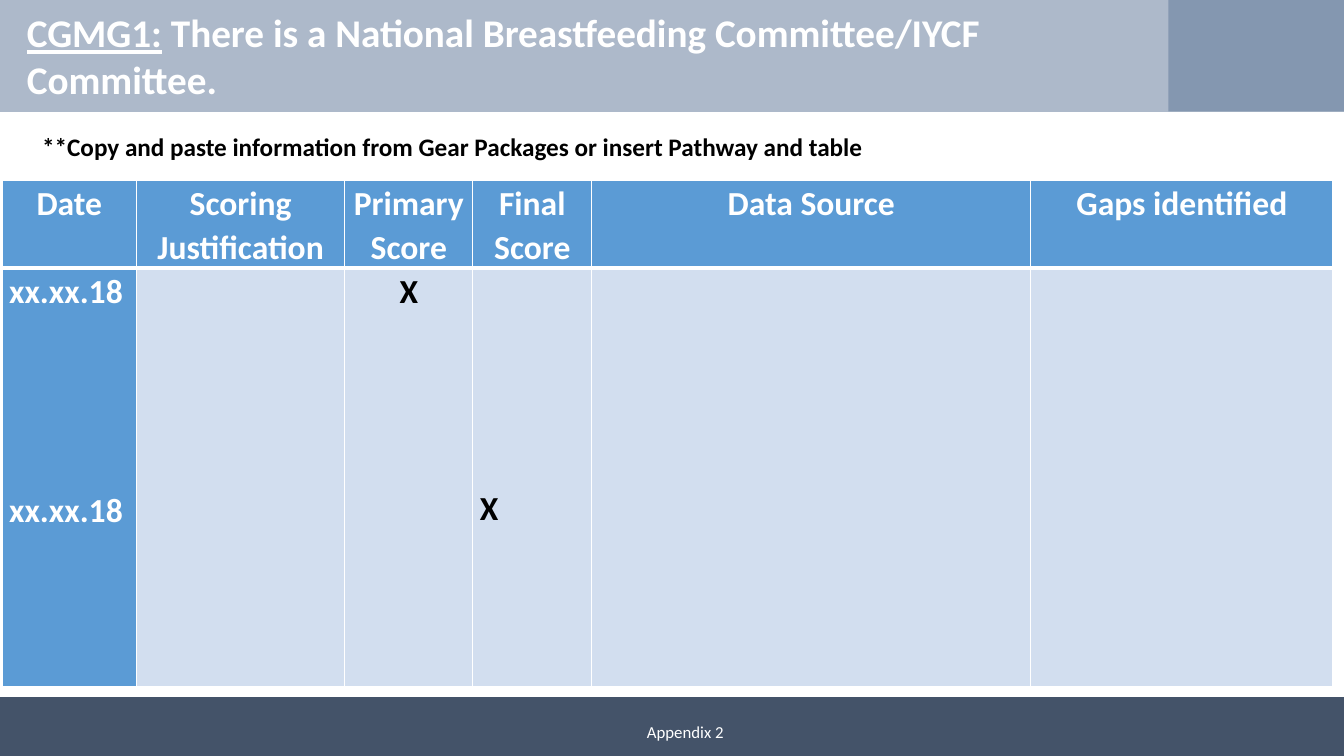
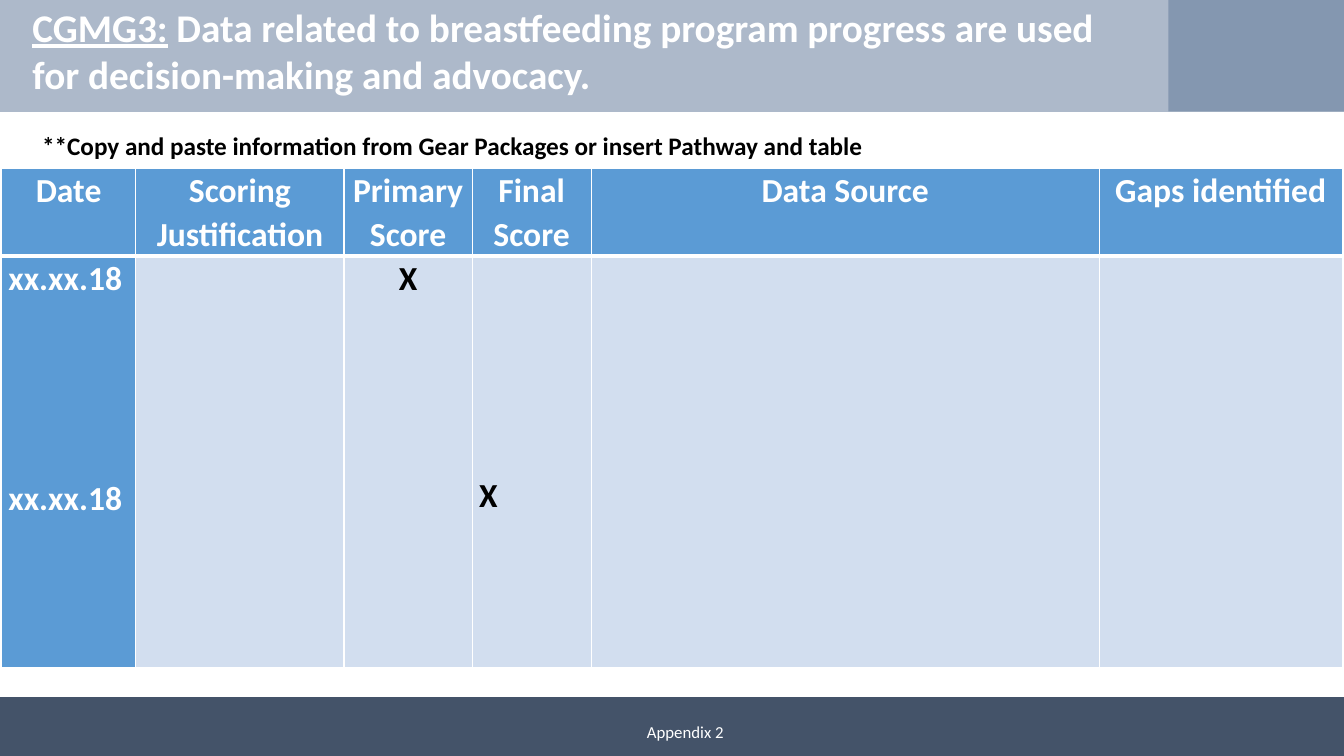
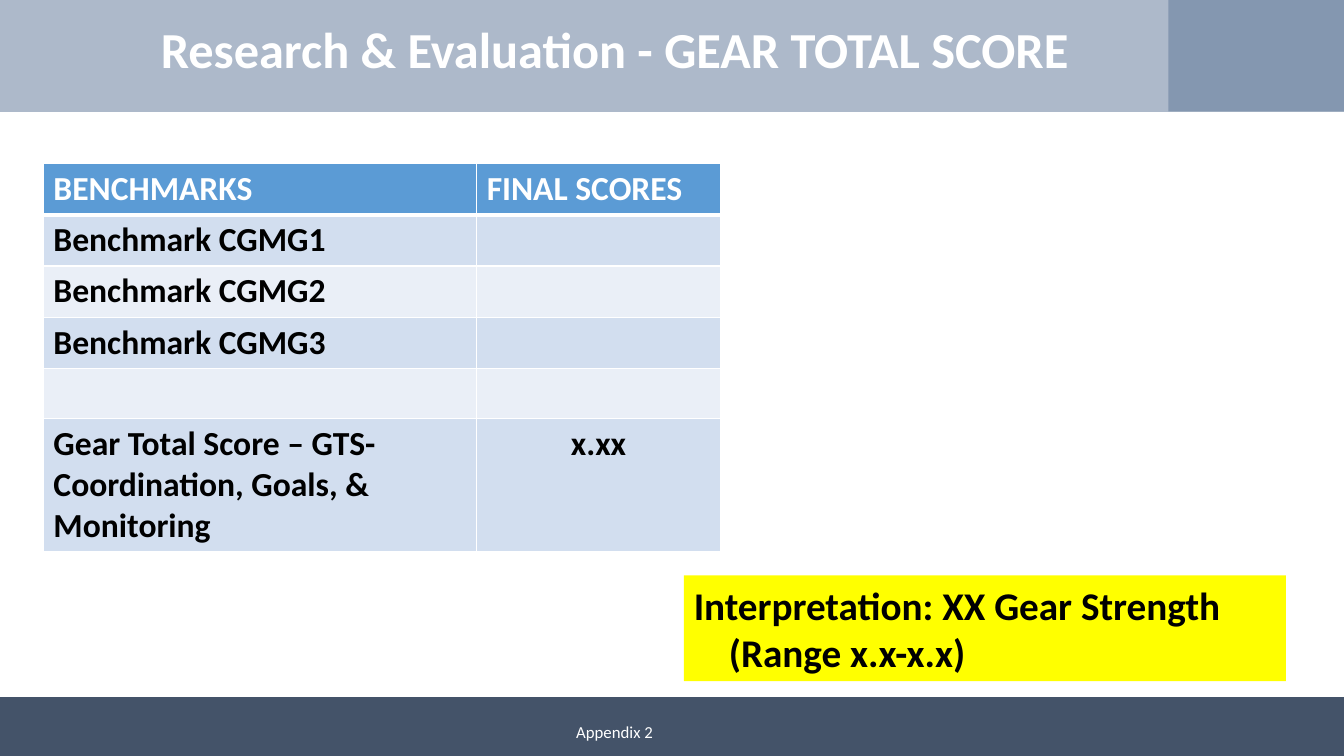
from lxml.etree import SubElement
from pptx import Presentation
from pptx.dml.color import RGBColor
from pptx.enum.shapes import MSO_SHAPE as SHAPE
from pptx.enum.text import MSO_ANCHOR as ANCHOR, MSO_AUTO_SIZE as AUTO, PP_ALIGN as ALIGN
from pptx.oxml.ns import qn
from pptx.util import Pt

W, H = 960, 540
FONT = "Calibri"
COLORS = {
    "white": "FFFFFF", "black": "000000", "band": "ADB9CA", "corner": "8497B0",
    "footer": "445369", "head": "5B9BD5", "row": "D2DEEF", "row_alt": "EAEFF7",
    "note": "FFFF00",
}
LINE = 1.07
HEADERS = ["Date", "Scoring Justification", "Primary Score", "Final Score",
           "Data Source", "Gaps identified"]
SCORE_COLS = [96, 148.8, 91.5, 85]
COPY_NOTE = "**Copy and paste information from Gear Packages or insert Pathway and table"


def rgb(name):
    return RGBColor.from_string(COLORS[name])


def style(p, size, color, bold=True, align=ALIGN.LEFT, spacing=None):
    p.alignment = align
    if spacing:
        p.line_spacing = spacing
    for r in p.runs:
        f = r.font
        f.name, f.size, f.bold = FONT, Pt(size), bold
        f.color.rgb = rgb(color)


def add_rect(slide, x, y, w, h, color):
    sp = slide.shapes.add_shape(SHAPE.RECTANGLE, Pt(x), Pt(y), Pt(w), Pt(h))
    sp.shadow.inherit = False
    sp.fill.solid()
    sp.fill.fore_color.rgb = rgb(color)
    sp.line.fill.background()
    return sp


def add_text(slide, x, y, w, h, text, size, color, **options):
    tf = slide.shapes.add_textbox(Pt(x), Pt(y), Pt(w), Pt(h)).text_frame
    tf.word_wrap = True
    tf.text = text
    style(tf.paragraphs[0], size, color, **options)
    return tf


def add_master_bands(prs, slide):
    """Draw the bands once and move them behind everything on the master."""
    tree = prs.slide_master.shapes._spTree
    bands = [(0, 0, W, 80, "band"), (0, 498, W, 48, "footer"),
             (834.5, 0, 125.5, 79.5, "corner")]
    for i, band in enumerate(bands):
        el = add_rect(slide, *band)._element
        el.nvSpPr.cNvPr.set("id", str(101 + i))
        tree.insert(2 + i, el)


def set_title(slide, x, y, w, h, text, size, code="", align=ALIGN.LEFT):
    title = slide.shapes.title
    title.left, title.top, title.width, title.height = Pt(x), Pt(y), Pt(w), Pt(h)
    tf = title.text_frame
    tf.auto_size, tf.vertical_anchor, tf.word_wrap = AUTO.NONE, ANCHOR.MIDDLE, True
    p = tf.paragraphs[0]
    if code:
        p.add_run().text = code
        p.runs[0].font.underline = True
    p.add_run().text = text
    style(p, size, "white", align=align)


def add_footer(slide, x):
    tf = add_text(slide, x, 508.5, 635, 28.5, "Appendix 2", 12, "white",
                  bold=False, align=ALIGN.CENTER)
    tf.vertical_anchor = ANCHOR.MIDDLE


def set_borders(cell, top, bottom):
    tcPr = cell._tc.get_or_add_tcPr()
    for side, width in (("L", 1), ("R", 1), ("T", top), ("B", bottom)):
        ln = SubElement(tcPr, qn(f"a:ln{side}"), w=str(Pt(width)))
        fill = SubElement(ln, qn("a:solidFill"))
        SubElement(fill, qn("a:srgbClr"), val=COLORS["white"])


def add_table(slide, x, y, cols, rows):
    """Add a table with white borders and a heavy rule under its header."""
    table = slide.shapes.add_table(len(rows), len(cols), Pt(x), Pt(y),
                                   Pt(sum(cols)), Pt(sum(rows))).table
    for col, width in zip(table.columns, cols):
        col.width = Pt(width)
    for i, (row, height) in enumerate(zip(table.rows, rows)):
        row.height = Pt(height)
        color = "head" if i == 0 else "row" if i % 2 else "row_alt"
        for cell in row.cells:
            set_borders(cell, 3 if i == 1 else 1, 3 if i == 0 else 1)
            fill_cell(cell, color)
    return table


def fill_cell(cell, color):
    cell.fill.solid()
    cell.fill.fore_color.rgb = rgb(color)


def set_cell(cell, text, color, **options):
    cell.text_frame.text = text
    for p in cell.text_frame.paragraphs:
        style(p, 24, color, **options)


def add_score_table(slide, x, y, last_cols, body_height):
    table = add_table(slide, x, y, SCORE_COLS + last_cols, [62.5, body_height])
    for cell in table.iter_cells():
        cell.margin_left = cell.margin_right = Pt(5)
        cell.margin_top = cell.margin_bottom = 0
    for i, text in enumerate(HEADERS):
        set_cell(table.cell(0, i), text, "white", align=ALIGN.CENTER, spacing=LINE)
        if text.endswith("Score"):
            table.cell(0, i).vertical_anchor = ANCHOR.MIDDLE

    dates, _, primary, final = [table.cell(1, i) for i in range(4)]
    fill_cell(dates, "head")
    set_cell(dates, "xx.xx.18\nxx.xx.18", "white", spacing=LINE)
    dates.text_frame.paragraphs[1].space_before = Pt(125.5)
    set_cell(primary, "X", "black", align=ALIGN.CENTER, spacing=LINE)
    set_cell(final, "X", "black", spacing=LINE)
    final.margin_top = Pt(155)


def add_benchmark_table(slide):
    table = add_table(slide, 31, 117, [309.5, 174], [36] * 5 + [94])
    names = ["BENCHMARKS"] + [f"Benchmark CGMG{n}" for n in (1, 2, 3)]
    for i, name in enumerate(names):
        set_cell(table.cell(i, 0), name, "black" if i else "white")
    set_cell(table.cell(0, 1), "FINAL SCORES", "white")
    set_cell(table.cell(5, 0),
             "Gear Total Score – GTS- Coordination, Goals, & Monitoring", "black")
    set_cell(table.cell(5, 1), "x.xx", "black", align=ALIGN.CENTER)


def add_interpretation(slide):
    tf = add_rect(slide, 488.5, 411, 430, 75.5, "note").text_frame
    tf.word_wrap = True
    tf.text = "Interpretation: XX Gear Strength\n(Range x.x-x.x)"
    for p in tf.paragraphs:
        style(p, 28, "black")
    tf.paragraphs[1]._p.get_or_add_pPr().set("marL", str(Pt(25)))


def main():
    prs = Presentation()
    prs.slide_width, prs.slide_height = Pt(W), Pt(H)
    layout = prs.slide_layouts[5]
    s1, s2, s3 = [prs.slides.add_slide(layout) for _ in range(3)]
    add_master_bands(prs, s1)

    # Benchmark slides
    set_title(s1, 12, 11, 819.5, 57.5,
              " There is a National Breastfeeding Committee/IYCF Committee.", 28, "CGMG1:")
    add_score_table(s1, 1.5, 129, [313.5, 216], 299)
    set_title(s2, 16, 7, 809.5, 57.5,
              " Data related to breastfeeding program progress are used "
              "for decision-making and advocacy.", 28, "CGMG3:")
    add_score_table(s2, 1, 120, [363, 173.5], 294.5)
    for s, y in ((s1, 88.5), (s2, 88)):
        add_text(s, 23, y, 808.5, 31, COPY_NOTE, 18, "black", spacing=LINE)

    # Total score slide
    set_title(s3, 0, -8.5, 878.5, 86.5, "Research & Evaluation - GEAR TOTAL SCORE",
              36, align=ALIGN.CENTER)
    add_interpretation(s3)
    add_benchmark_table(s3)

    for s, x in ((s1, 172), (s2, 172), (s3, 121.5)):
        add_footer(s, x)
    prs.save("out.pptx")


if __name__ == "__main__":
    main()
